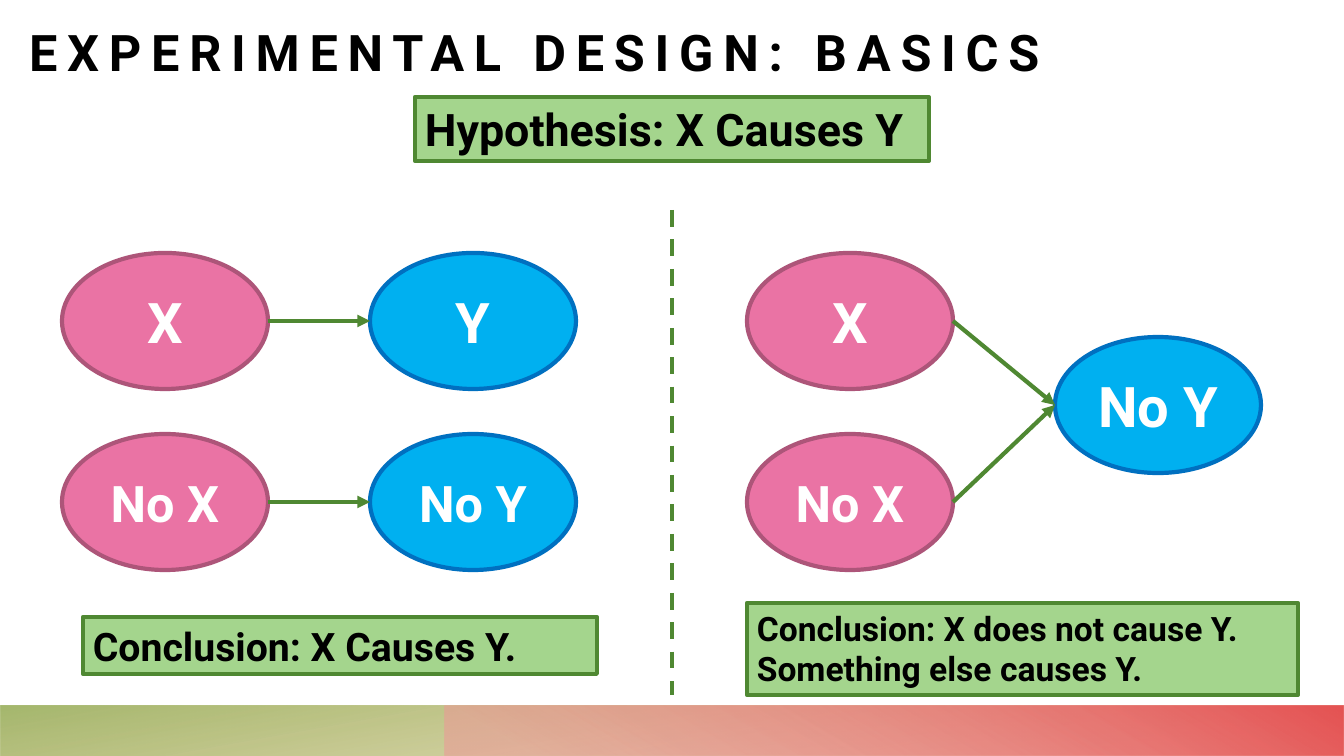
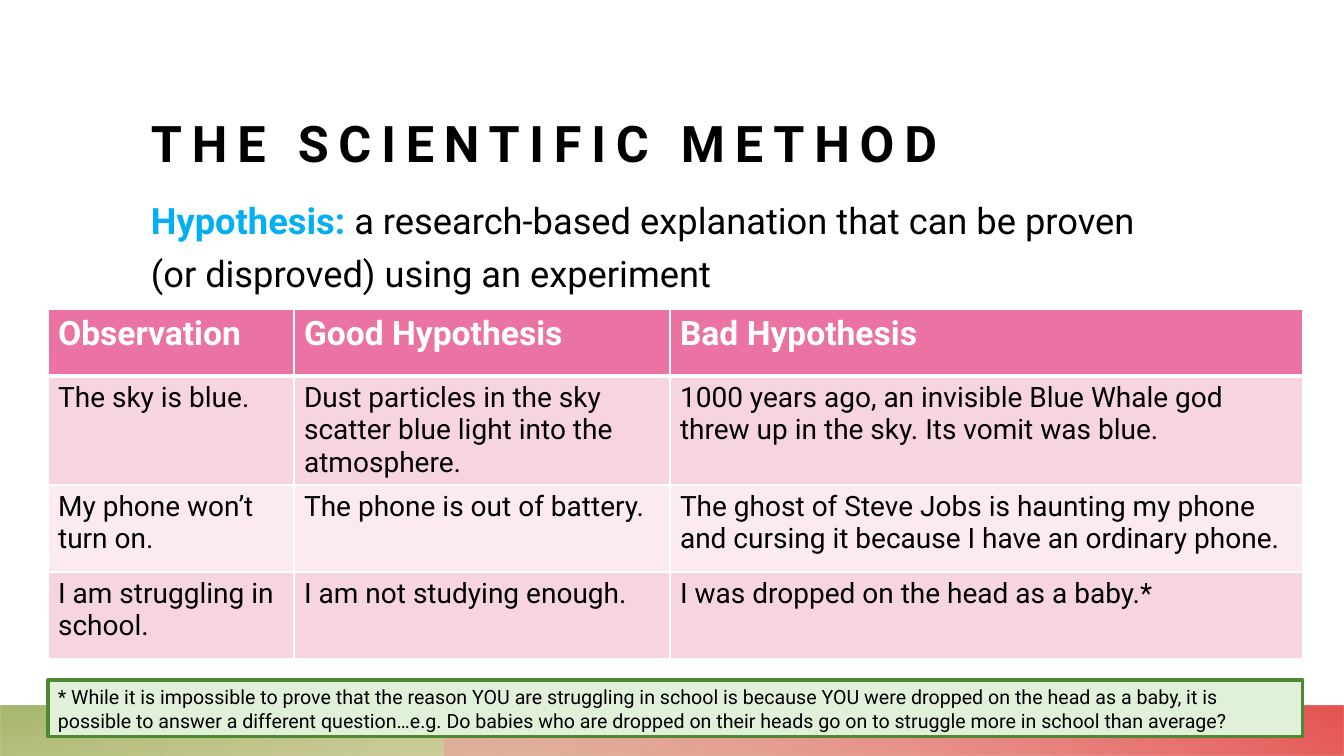
"""Build two science-class slides: experimental design and the scientific method."""
from lxml.etree import SubElement
from pptx import Presentation
from pptx.dml.color import RGBColor
from pptx.enum.dml import MSO_LINE
from pptx.enum.shapes import MSO_CONNECTOR, MSO_SHAPE
from pptx.enum.text import MSO_ANCHOR, MSO_AUTO_SIZE, PP_ALIGN
from pptx.oxml.ns import qn
from pptx.util import Emu, Pt

FONT = "Roboto"
COLORS = {
    "black": "000000", "white": "FFFFFF", "pink": "EA73A4", "plum": "AD5579",
    "sky": "00B0F0", "blue": "0070C0", "leaf": "A4D58D", "mint": "E1F1D9",
    "green": "4F8832", "rose": "F7D5E0", "blush": "FBEBF0",
    "olive": "B6A343", "moss": "95AB54", "salmon": "EF9898", "red": "E55454",
}
SLIDE_W, SLIDE_H = 1344, 756
EMU_PER_INCH, PX_PER_INCH = 914400, 100.8

BANDS = [
    dict(left=0, angle=100, rotation=180,
         stops=[(14, "olive", 28), (100, "moss", 85)]),
    dict(left=445, angle=240, rotation=0,
         stops=[(9, "salmon", 55), (99, "red", 100)]),
]
BAND_TOP = 706

DESIGN_TITLE = ("EXPERIMENTAL DESIGN: BASICS", (29, -54, 1129, 136))
DESIGN_BOXES = [
    ("Hypothesis: X Causes Y", (415, 97, 514, 64), 32),
    ("Conclusion: X Causes Y.", (83, 617, 514, 57), 28),
    ("Conclusion: X does not cause Y. Something else causes Y.",
     (747, 603, 551, 92), 24),
]
DIVIDER = (672, 210, 672, 695)
OVAL_W, OVAL_H, OVAL_STEP = 206, 136, 308
CAUSE_TOPS = (253, 434)
CAUSES = [("X", 40), ("No X", 36)]
PANELS = [
    dict(left=62, effects=[("Y", 253, 40), ("No Y", 434, 36)], links=[(0, 0), (1, 1)]),
    dict(left=747, effects=[("No Y", 337, 40)], links=[(0, 0), (1, 0)]),
]
OVAL_LEFT_SITE, OVAL_RIGHT_SITE = 2, 6

METHOD_TITLE = ("THE SCIENTIFIC METHOD", (151, 37, 1129, 136))
DEFINITION = [
    ("Hypothesis: ", dict(color="sky", bold=True)),
    ("a research-based explanation that can be proven \n"
     "(or disproved) using an experiment", {}),
]
DEFINITION_AREA = (151, 190, 1055, 145)
EXAMPLES = [
    ("Observation", "Good Hypothesis", "Bad Hypothesis"),
    ("The sky is blue.",
     "Dust particles in the sky scatter blue light into the atmosphere.",
     "1000 years ago, an invisible Blue Whale god threw up in the sky. "
     "Its vomit was blue."),
    ("My phone won’t turn on.", "The phone is out of battery.",
     "The ghost of Steve Jobs is haunting my phone and cursing it because "
     "I have an ordinary phone."),
    ("I am struggling in school.", "I am not studying enough.",
     "I was dropped on the head as a baby.*"),
]
EXAMPLES_LEFT, EXAMPLES_TOP = 48, 309
COLUMN_WIDTHS = (246, 376, 633)
ROW_HEIGHTS = (67, 109, 87, 87)
FOOTNOTE = (
    "* While it is impossible to prove that the reason YOU are struggling in school "
    "is because YOU were dropped on the head as a baby, it is possible to answer a "
    "different question…e.g. Do babies who are dropped on their heads go on to "
    "struggle more in school than average?")
FOOTNOTE_AREA = (48, 680, 1255, 57)


def px(length):
    return Emu(round(length * EMU_PER_INCH / PX_PER_INCH))


def area(box):
    return [px(length) for length in box]


def rgb(name):
    return RGBColor.from_string(COLORS[name])


def write(frame, content, size, color="black", bold=False, align=PP_ALIGN.LEFT,
          anchor=MSO_ANCHOR.TOP, inset=None, tracking=None, leading=None,
          before=None, fit=MSO_AUTO_SIZE.NONE):
    frame.word_wrap = True
    frame.auto_size = fit
    frame.vertical_anchor = anchor
    if inset is not None:
        frame.margin_left = frame.margin_right = px(inset)
        frame.margin_top = frame.margin_bottom = px(inset)
    paragraph = frame.paragraphs[0]
    paragraph.alignment = align
    paragraph.line_spacing = leading
    if before is not None:
        paragraph.space_before = Pt(before)
    parts = [(content, {})] if isinstance(content, str) else content
    for words, changes in parts:
        for index, line in enumerate(words.split("\n")):
            if index:
                paragraph.add_line_break()
            run = paragraph.add_run()
            run.text = line
            run.font.name = FONT
            run.font.size = Pt(size)
            run.font.bold = changes.get("bold", bold)
            run.font.color.rgb = rgb(changes.get("color", color))
            if tracking:
                run.font.element.set("spc", str(tracking * 100)) if hasattr(
                    run.font, "element") else run._r.get_or_add_rPr().set(
                    "spc", str(tracking * 100))


def add_filled(slide, kind, box, fill, line, weight=3):
    shape = slide.shapes.add_shape(kind, *area(box))
    shape.shadow.inherit = False
    shape.fill.solid()
    shape.fill.fore_color.rgb = rgb(fill)
    shape.line.color.rgb = rgb(line)
    shape.line.width = Pt(weight)
    return shape


def add_box(slide, words, box, size, fill="leaf", weight=3, bold=True):
    shape = add_filled(slide, MSO_SHAPE.RECTANGLE, box, fill, "green", weight)
    write(shape.text_frame, words, size, bold=bold, fit=MSO_AUTO_SIZE.SHAPE_TO_FIT_TEXT)


def add_oval(slide, words, left, top, size, fill, line):
    oval = add_filled(slide, MSO_SHAPE.OVAL, (left, top, OVAL_W, OVAL_H), fill, line)
    write(oval.text_frame, words, size, color="white", bold=True,
          align=PP_ALIGN.CENTER, anchor=MSO_ANCHOR.MIDDLE)
    return oval


def add_line(slide, ends):
    line = slide.shapes.add_connector(MSO_CONNECTOR.STRAIGHT, *ends)
    line.line.color.rgb = rgb("green")
    line.line.width = Pt(3)
    SubElement(line.element.spPr, qn("a:effectLst"))
    return line


def add_arrow(slide, cause, effect):
    arrow = add_line(slide, (cause.left + cause.width, cause.top + cause.height // 2,
                             effect.left, effect.top + effect.height // 2))
    SubElement(arrow.line._get_or_add_ln(), qn("a:tailEnd"), type="triangle")
    joints = next(arrow.element.iter(qn("p:cNvCxnSpPr")))
    for tag, oval, site in (("a:stCxn", cause, OVAL_RIGHT_SITE),
                            ("a:endCxn", effect, OVAL_LEFT_SITE)):
        SubElement(joints, qn(tag), id=str(oval.shape_id), idx=str(site))


def add_bands(slide, layout):
    for band in BANDS:
        strip = slide.shapes.add_shape(MSO_SHAPE.RECTANGLE, *area(
            (band["left"], BAND_TOP, SLIDE_W - band["left"], SLIDE_H - BAND_TOP)))
        strip.shadow.inherit = False
        strip.line.fill.background()
        strip.rotation = band["rotation"]
        strip.element.spPr.find(qn("a:xfrm")).set("flipH", "1")
        strip.fill.gradient()
        strip.fill.gradient_angle = 360 - band["angle"]
        for stop, (position, color, _) in zip(strip.fill.gradient_stops, band["stops"]):
            stop.position = position / 100
            stop.color.rgb = rgb(color)
        tints = strip.element.spPr.iter(qn("a:srgbClr"))
        for tint, (_, _, opacity) in zip(list(tints), band["stops"]):
            SubElement(tint, qn("a:alpha"), val=str(opacity * 1000))
        layout.shapes.element.append(strip.element)


def add_titled_slide(prs, layout, words, box):
    slide = prs.slides.add_slide(layout)
    title = slide.shapes.title
    title.left, title.top, title.width, title.height = area(box)
    write(title.text_frame, words, 36, bold=True, anchor=MSO_ANCHOR.BOTTOM,
          inset=0, tracking=7)
    return slide


def add_borders(cell, bottom):
    properties = cell._tc.get_or_add_tcPr()
    sides = (("a:lnL", 1), ("a:lnR", 1), ("a:lnT", 1), ("a:lnB", bottom))
    for index, (tag, weight) in enumerate(sides):
        border = SubElement(properties, qn(tag), w=str(Pt(weight)))
        paint = SubElement(border, qn("a:solidFill"))
        SubElement(paint, qn("a:srgbClr"), val=COLORS["white"])
        properties.insert(index, border)


def add_examples(slide):
    table = slide.shapes.add_table(
        len(EXAMPLES), len(COLUMN_WIDTHS),
        *area((EXAMPLES_LEFT, EXAMPLES_TOP, sum(COLUMN_WIDTHS), sum(ROW_HEIGHTS)))).table
    for column, width in zip(table.columns, COLUMN_WIDTHS):
        column.width = px(width)
    for number, (row, height, entries) in enumerate(
            zip(table.rows, ROW_HEIGHTS, EXAMPLES)):
        row.height = px(height)
        header = number == 0
        fill = "pink" if header else ("blush", "rose")[number % 2]
        for cell, words in zip(row.cells, entries):
            cell.fill.solid()
            cell.fill.fore_color.rgb = rgb(fill)
            add_borders(cell, bottom=3 if header else 1)
            write_cell(cell, words, header)


def write_cell(cell, words, header):
    cell.vertical_anchor = MSO_ANCHOR.TOP
    run = cell.text_frame.paragraphs[0].add_run()
    run.text = words
    run.font.name = FONT
    run.font.size = Pt(24 if header else 20)
    run.font.bold = header
    run.font.color.rgb = rgb("white" if header else "black")


def build_design(slide):
    for words, box, size in DESIGN_BOXES:
        add_box(slide, words, box, size)
    add_line(slide, area(DIVIDER)).line.dash_style = MSO_LINE.DASH
    for panel in PANELS:
        left = panel["left"]
        causes = [add_oval(slide, words, left, top, size, "pink", "plum")
                  for (words, size), top in zip(CAUSES, CAUSE_TOPS)]
        effects = [add_oval(slide, words, left + OVAL_STEP, top, size, "sky", "blue")
                   for words, top, size in panel["effects"]]
        for cause, effect in panel["links"]:
            add_arrow(slide, causes[cause], effects[effect])


def build_method(slide):
    definition = slide.shapes.add_textbox(*area(DEFINITION_AREA))
    write(definition.text_frame, DEFINITION, 25.9, inset=0, leading=1.2, before=10)
    add_examples(slide)
    add_box(slide, FOOTNOTE, FOOTNOTE_AREA, 14, fill="mint", weight=2.25, bold=False)


def main():
    prs = Presentation()
    prs.slide_width, prs.slide_height = px(SLIDE_W), px(SLIDE_H)
    layout = prs.slide_layouts[5]
    design = add_titled_slide(prs, layout, *DESIGN_TITLE)
    add_bands(design, layout)
    build_design(design)
    build_method(add_titled_slide(prs, layout, *METHOD_TITLE))
    prs.save("out.pptx")


if __name__ == "__main__":
    main()
